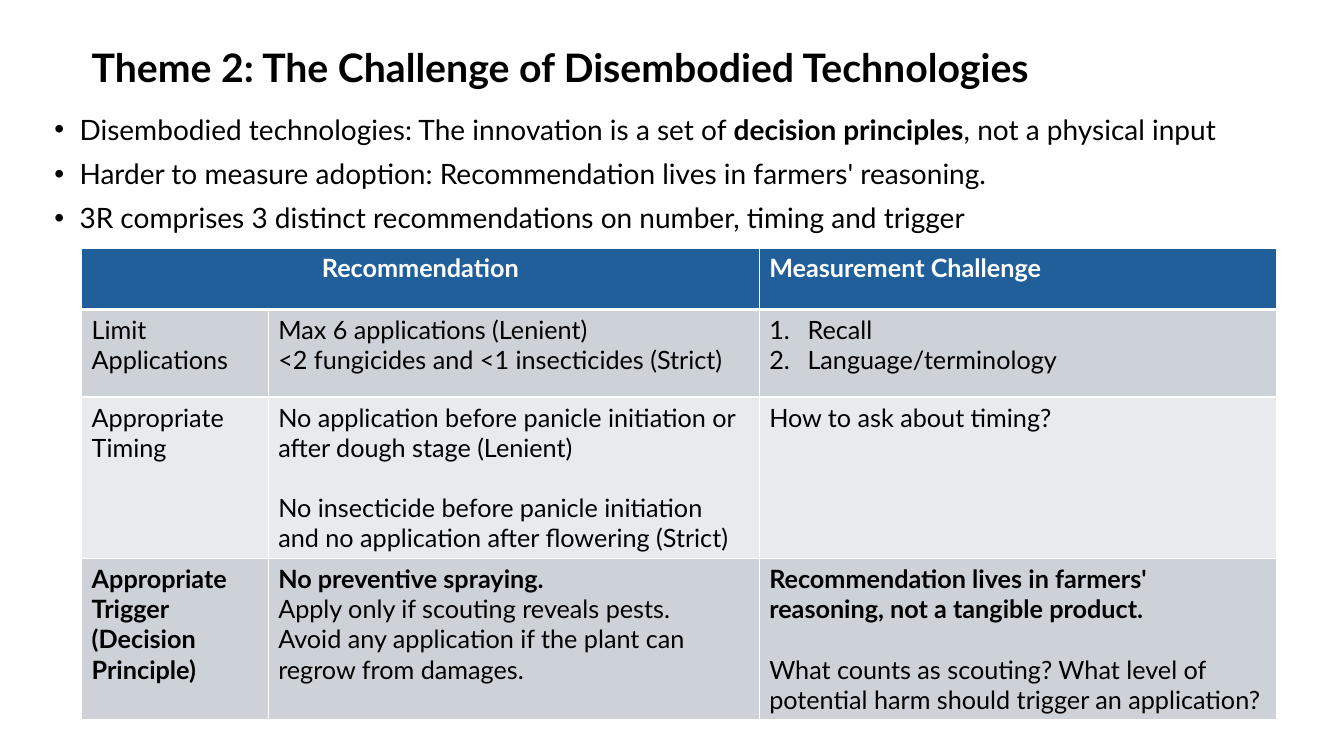
from dataclasses import dataclass

from lxml import etree
from pptx import Presentation
from pptx import util as u
from pptx.dml.color import RGBColor
from pptx.enum import text
from pptx.oxml import ns

FONT = "Lato"
BLACK, WHITE = "000000", "FFFFFF"
HEADER_FILL, DARK_BAND, LIGHT_BAND = "215F9A", "CCD2D8", "E8EAED"
BLANK_LINE = 21.6


@dataclass
class Run:
    words: str
    bold: bool = False


@dataclass
class Para:
    runs: list[Run]
    before: float = 0
    bullet: str = ""
    indent: float = 0
    spacing: float = 1.0
    align: text.PP_ALIGN = text.PP_ALIGN.LEFT


@dataclass
class Row:
    height: float
    fill: str
    color: str
    cells: list[list[Para]]


def rgb(value: str) -> RGBColor:
    return RGBColor.from_string(value)


def line(words: str, bold: bool = False, before: float = 0) -> Para:
    return Para([Run(words, bold)], before)


def numbered(words: str) -> Para:
    return Para([Run(words)], bullet="arabicPeriod", indent=0.38)


def point(*runs: Run, before: float = 10) -> Para:
    return Para(list(runs), before, "•", 0.25, 0.9)


def add_bullet(p, para: Para) -> None:
    pPr = p._p.get_or_add_pPr()
    pPr.set("marL", str(u.Inches(para.indent)))
    pPr.set("indent", str(-u.Inches(para.indent)))
    if para.bullet == "•":
        font = etree.SubElement(pPr, ns.qn("a:buFont"))
        font.set("typeface", "Arial")
        etree.SubElement(pPr, ns.qn("a:buChar")).set("char", para.bullet)
    else:
        etree.SubElement(pPr, ns.qn("a:buAutoNum")).set("type", para.bullet)


def write(tf, paras: list[Para], size: float, color: str) -> None:
    tf.word_wrap = True
    for i, para in enumerate(paras):
        p = tf.paragraphs[0] if i == 0 else tf.add_paragraph()
        if para.bullet:
            add_bullet(p, para)
        p.alignment = para.align
        p.line_spacing = para.spacing
        p.space_before = u.Pt(para.before)
        for run in para.runs:
            r = p.add_run()
            r.text = run.words
            r.font.name = FONT
            r.font.size = u.Pt(size)
            r.font.bold = run.bold
            r.font.color.rgb = rgb(color)


def add_border(cell, side: str, width: float, position: int) -> None:
    ln = etree.Element(ns.qn(f"a:ln{side}"), w=str(u.Pt(width)))
    fill = etree.SubElement(ln, ns.qn("a:solidFill"))
    etree.SubElement(fill, ns.qn("a:srgbClr")).set("val", WHITE)
    cell._tc.get_or_add_tcPr().insert(position, ln)


def add_title(slide, words: str) -> None:
    sp = slide.shapes.title
    sp.left, sp.top = u.Inches(0.81), u.Inches(0.4)
    sp.width, sp.height = u.Inches(11.15), u.Inches(0.59)
    tf = sp.text_frame
    tf.auto_size = text.MSO_AUTO_SIZE.NONE
    tf.vertical_anchor = text.MSO_ANCHOR.MIDDLE
    write(tf, [Para([Run(words, True)], spacing=0.9)], 28, BLACK)


def add_points(slide, paras: list[Para]) -> None:
    sp = slide.shapes.add_textbox(u.Inches(0.44), u.Inches(1.1), u.Inches(11.98), u.Inches(1.3))
    write(sp.text_frame, paras, 20, BLACK)


def add_recommendations(slide, widths: list[float], rows: list[Row]) -> None:
    frame = slide.shapes.add_table(
        len(rows), len(widths), u.Inches(0.81), u.Inches(2.46),
        u.Inches(sum(widths)), u.Inches(sum(row.height for row in rows)))
    table = frame.table
    table.horz_banding = False
    for column, width in zip(table.columns, widths):
        column.width = u.Inches(width)
    for i, row in enumerate(rows):
        table.rows[i].height = u.Inches(row.height)
        for j, paras in enumerate(row.cells):
            cell = table.cell(i, j)
            cell.fill.solid()
            cell.fill.fore_color.rgb = rgb(row.fill)
            edges = {"L": 1, "R": 1, "T": 3 if i == 1 else 1, "B": 3 if i == 0 else 1}
            for position, (side, width) in enumerate(edges.items()):
                add_border(cell, side, width, position)
            write(cell.text_frame, paras, 18, row.color)
    table.cell(0, 0).merge(table.cell(0, 1))


POINTS = [
    point(Run("Disembodied technologies: The innovation is a set of "),
          Run("decision principles", True), Run(", not a physical input"), before=0),
    point(Run("Harder to measure adoption: Recommendation lives in farmers' reasoning.")),
    point(Run("3R comprises 3 distinct recommendations on number, timing and trigger")),
]

ROWS = [
    Row(0.61, HEADER_FILL, WHITE, [
        [Para([Run("Recommendation", True)], align=text.PP_ALIGN.CENTER)],
        [],
        [line("Measurement Challenge", True)],
    ]),
    Row(0.87, DARK_BAND, BLACK, [
        [line("Limit Applications")],
        [line("Max 6 applications (Lenient)"),
         line("<2 fungicides and <1 insecticides (Strict)")],
        [numbered("Recall"), numbered("Language/terminology")],
    ]),
    Row(1.6, LIGHT_BAND, BLACK, [
        [line("Appropriate Timing")],
        [line("No application before panicle initiation or after dough stage (Lenient)"),
         line("No insecticide before panicle initiation and no application after flowering (Strict)",
              before=BLANK_LINE)],
        [line("How to ask about timing?")],
    ]),
    Row(1.6, DARK_BAND, BLACK, [
        [line("Appropriate Trigger (Decision Principle)", True)],
        [line("No preventive spraying.", True),
         line("Apply only if scouting reveals pests."),
         line("Avoid any application if the plant can regrow from damages.")],
        [line("Recommendation lives in farmers' reasoning, not a tangible product.", True),
         line("What counts as scouting? What level of potential harm should trigger an application?",
              before=BLANK_LINE)],
    ]),
]


def main() -> None:
    prs = Presentation()
    prs.slide_width, prs.slide_height = u.Inches(13.33), u.Inches(7.5)
    slide = prs.slides.add_slide(prs.slide_layouts[5])
    add_title(slide, "Theme 2: The Challenge of Disembodied Technologies")
    add_points(slide, POINTS)
    add_recommendations(slide, [1.85, 4.87, 5.13], ROWS)
    prs.save("out.pptx")


if __name__ == "__main__":
    main()
